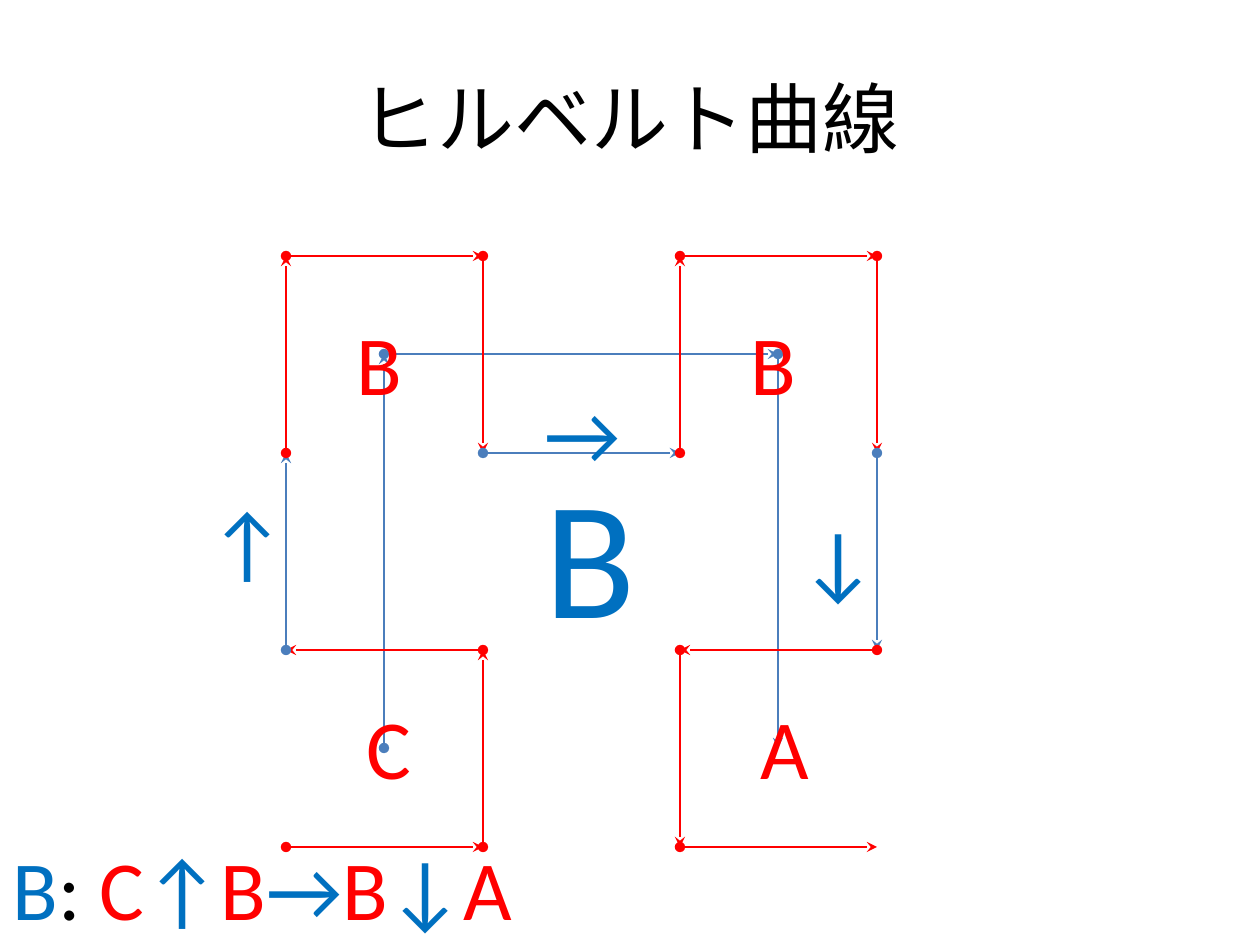
from itertools import pairwise

from lxml.etree import SubElement
from pptx import Presentation
from pptx.dml.color import RGBColor
from pptx.enum.shapes import MSO_CONNECTOR as Connector
from pptx.enum.text import MSO_ANCHOR as Anchor, MSO_AUTO_SIZE as AutoSize, PP_ALIGN as Align
from pptx.oxml.ns import qn
from pptx.util import Emu, Pt

BLACK = RGBColor(0x00, 0x00, 0x00)
RED = RGBColor(0xFF, 0x00, 0x00)
BLUE = RGBColor(0x00, 0x70, 0xC0)
STEEL = RGBColor(0x4B, 0x7E, 0xBC)

EMU_PER_PX = 914400 / 126
LEFT, TOP, STEP = 286, 256, 197

# (column, row) of each grid point, in the order the curve visits them
COARSE_CURVE = [(0.5, 2.5), (0.5, 0.5), (2.5, 0.5), (2.5, 2.5)]
FINE_CURVE = [
    (0, 3), (1, 3), (1, 2), (0, 2),
    (0, 1), (0, 0), (1, 0), (1, 1),
    (2, 1), (2, 0), (3, 0), (3, 1),
    (3, 2), (2, 2), (2, 3), (3, 3),
]

# left, top, width, height, text, size, colour
LABELS = [
    (532, 444, 117, 217, "B", 96, BLUE),
    (344, 305, 72, 115, "B", 48, RED),
    (738, 305, 72, 115, "B", 48, RED),
    (748, 689, 74, 115, "A", 48, RED),
    (354, 689, 71, 115, "C", 48, RED),
    (532, 374, 102, 115, "→", 48, BLUE),
    (788, 501, 102, 115, "↓", 48, BLUE),
    (197, 483, 102, 115, "↑", 48, BLUE),
]
RULE = [
    ("B", BLUE), (": ", BLACK), ("C", RED), ("↑", BLUE), ("B", RED),
    ("→", BLUE), ("B", RED), ("↓", BLUE), ("A", RED),
]


def px(length):
    return Emu(round(length * EMU_PER_PX))


def grid_point(column, row):
    return px(round(LEFT + column * STEP)), px(round(TOP + row * STEP))


class SlideBuilder:
    font = "Calibri"
    line_width = Pt(1)

    def __init__(self, slide):
        self.slide = slide

    def format_run(self, run, size, color):
        run.font.name = self.font
        run.font.size = Pt(size)
        run.font.color.rgb = color

    def title(self, left, top, width, height, text):
        shape = self.slide.shapes.title
        shape.left, shape.top = px(left), px(top)
        shape.width, shape.height = px(width), px(height)
        frame = shape.text_frame
        frame.text = text
        frame.vertical_anchor = Anchor.MIDDLE
        paragraph = frame.paragraphs[0]
        paragraph.alignment = Align.CENTER
        self.format_run(paragraph.runs[0], 44, BLACK)

    def text(self, left, top, width, height, parts, size):
        """Add one line of text from (text, colour) parts."""
        box = self.slide.shapes.add_textbox(px(left), px(top), px(width), px(height))
        frame = box.text_frame
        frame.word_wrap = False
        frame.auto_size = AutoSize.SHAPE_TO_FIT_TEXT
        for text, color in parts:
            run = frame.paragraphs[0].add_run()
            run.text = text
            self.format_run(run, size, color)

    def arrow(self, start, end, color):
        """Join two grid points, with a dot at the start and an arrowhead at the end."""
        connector = self.slide.shapes.add_connector(
            Connector.STRAIGHT, *grid_point(*start), *grid_point(*end))
        connector.line.color.rgb = color
        connector.line.width = self.line_width
        properties = connector.line._get_or_add_ln()
        SubElement(properties, qn("a:headEnd"), type="oval")
        SubElement(properties, qn("a:tailEnd"), type="stealth")
        SubElement(connector._element.spPr, qn("a:effectLst"))


def main():
    presentation = Presentation()
    presentation.slide_width, presentation.slide_height = px(1260), px(945)
    title_only = presentation.slide_layouts[5]
    builder = SlideBuilder(presentation.slides.add_slide(title_only))

    builder.title(63, 38, 1134, 157, "ヒルベルト曲線")
    for start, end in pairwise(COARSE_CURVE):
        builder.arrow(start, end, STEEL)
    for number, (start, end) in enumerate(pairwise(FINE_CURVE), start=1):
        # every fourth step links two of the four small curves
        builder.arrow(start, end, STEEL if number % 4 == 0 else RED)
    for left, top, width, height, text, size, color in LABELS:
        builder.text(left, top, width, height, [(text, color)], size)
    builder.text(0, 830, 530, 115, RULE, 48)

    presentation.save("out.pptx")


if __name__ == "__main__":
    main()
